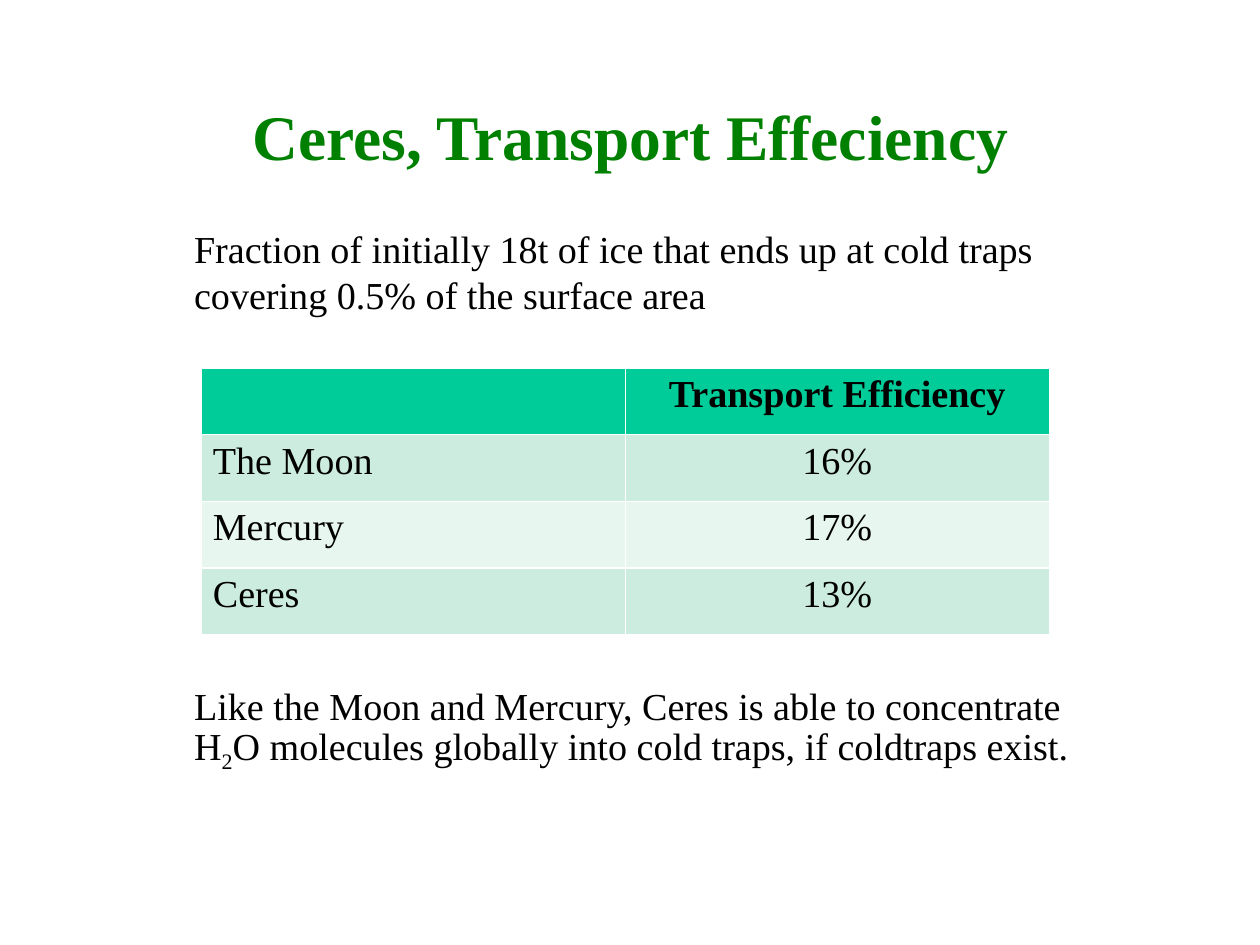
from dataclasses import dataclass

from pptx import Presentation
from pptx.dml.color import RGBColor
from pptx.enum.text import MSO_ANCHOR, PP_ALIGN
from pptx.util import Pt


@dataclass(frozen=True)
class Theme:
    font: str = "Times New Roman"
    title_size: float = 40
    title_leading: float = 50.9
    body_size: float = 24
    body_leading: float = 28.8
    title: str = "008000"
    text: str = "000000"
    header: str = "00CC99"
    bands: tuple = ("CBECDE", "E7F6EF")


THEME = Theme()


def style(p, size, color, bold=False, align=PP_ALIGN.LEFT):
    p.alignment = align
    p.font.name = THEME.font
    p.font.size = Pt(size)
    p.font.bold = bold
    p.font.color.rgb = RGBColor.from_string(color)


def set_title(s, text, left, top, width, height):
    sp = s.shapes.title
    sp.left, sp.top, sp.width, sp.height = Pt(left), Pt(top), Pt(width), Pt(height)
    tf = sp.text_frame
    tf.margin_left = tf.margin_top = tf.margin_right = tf.margin_bottom = 0
    tf.vertical_anchor = MSO_ANCHOR.MIDDLE
    tf.text = text
    p = tf.paragraphs[0]
    style(p, THEME.title_size, THEME.title, True, PP_ALIGN.CENTER)
    p.line_spacing = Pt(THEME.title_leading)


def add_text(s, runs, left, top, width, height):
    tf = s.shapes.add_textbox(Pt(left), Pt(top), Pt(width), Pt(height)).text_frame
    tf.word_wrap = True
    p = tf.paragraphs[0]
    style(p, THEME.body_size, THEME.text)
    p.line_spacing = Pt(THEME.body_leading)
    for text, baseline in runs:
        r = p.add_run()
        r.text = text
        if baseline:
            r.font._element.set("baseline", str(baseline))


def add_data_table(s, rows, left, top, width, height):
    table = s.shapes.add_table(
        len(rows), len(rows[0]), Pt(left), Pt(top), Pt(width), Pt(height)
    ).table
    for i, row in enumerate(rows):
        fill = THEME.bands[(i - 1) % 2] if i else THEME.header
        for j, text in enumerate(row):
            cell = table.cell(i, j)
            cell.fill.solid()
            cell.fill.fore_color.rgb = RGBColor.from_string(fill)
            cell.text = text
            align = PP_ALIGN.CENTER if j else PP_ALIGN.LEFT
            style(cell.text_frame.paragraphs[0], THEME.body_size, THEME.text, i == 0, align)


def main():
    prs = Presentation()
    prs.slide_width, prs.slide_height = Pt(793.7), Pt(595.3)
    s = prs.slides.add_slide(prs.slide_layouts[5])
    set_title(s, "Ceres, Transport Effeciency", 58.3, 33.8, 677.5, 99.4)
    add_text(
        s,
        [("Fraction of initially 18t of ice that ends up at cold traps "
          "covering 0.5% of the surface area", 0)],
        115.2, 138.5, 576, 65,
    )
    add_data_table(
        s,
        [("", "Transport Efficiency"), ("The Moon", "16%"), ("Mercury", "17%"), ("Ceres", "13%")],
        126.9, 231.8, 534, 168,
    )
    add_text(
        s,
        [("Like the Moon and Mercury, Ceres is able to concentrate H", 0),
         ("2", -25000),
         ("O molecules globally into cold traps, if coldtraps exist.", 0)],
        115.2, 426.5, 576, 65,
    )
    prs.save("out.pptx")


if __name__ == "__main__":
    main()
